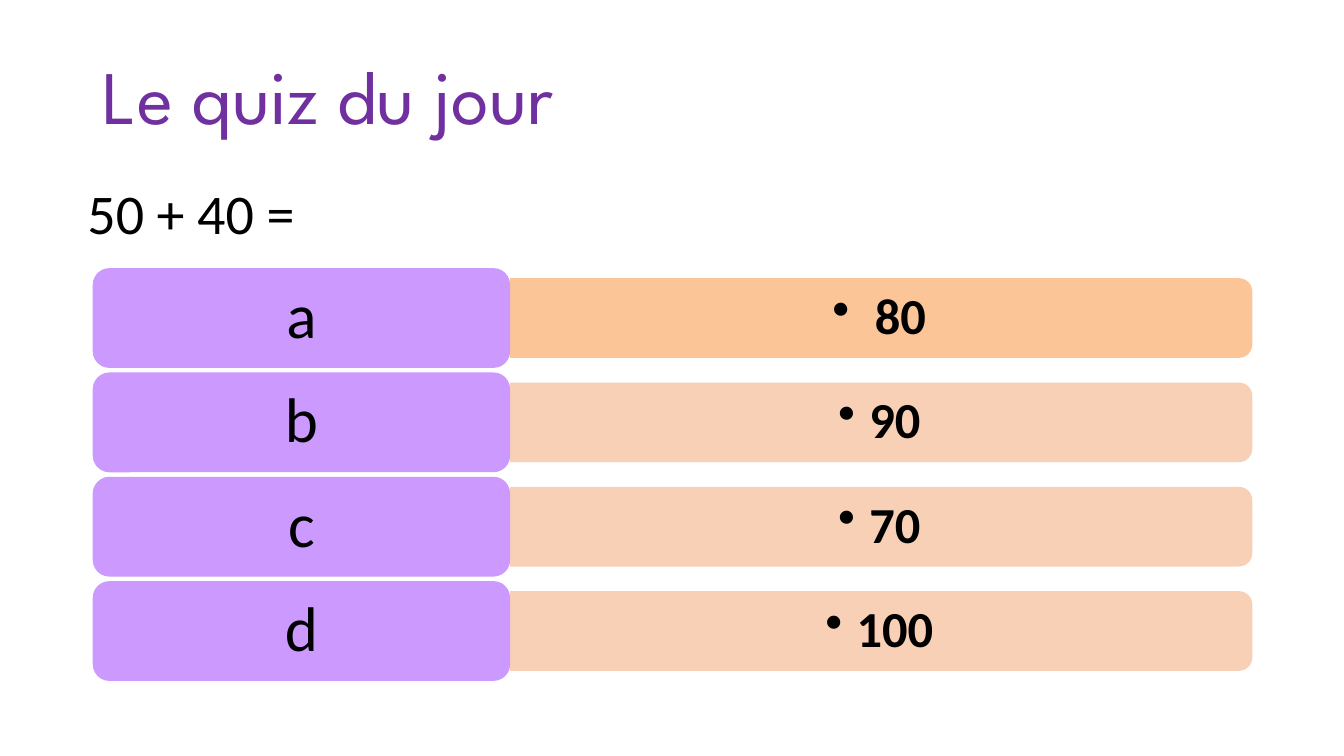
from lxml.etree import SubElement
from pptx import Presentation
from pptx.dml.color import RGBColor
from pptx.enum.shapes import MSO_SHAPE
from pptx.enum.text import MSO_ANCHOR, PP_ALIGN
from pptx.oxml.ns import qn
from pptx.util import Inches, Pt

TITLE = "Le quiz du jour"
QUESTION = "50 + 40 ="
ANSWERS = [
    ("a", " 80", "orange"),
    ("b", "90", "peach"),
    ("c", "70", "peach"),
    ("d", "100", "peach"),
]
COLORS = {
    "title": "7030A0",
    "letter": "CC99FF",
    "orange": "FBBF8D",
    "peach": "F8CBAD",
    "text": "000000",
}
LEFT, TOP, PITCH = 0.92, 2.66, 1.035
LETTER_WIDTH, LETTER_HEIGHT = 4.14, 0.99
BAR_WIDTH, BAR_HEIGHT = 7.36, 0.79


def color(name):
    return RGBColor.from_string(COLORS[name])


def write(box, text, size, font="Calibri", ink="text", bold=False,
          align=PP_ALIGN.CENTER, spacing=0.9):
    frame = box.text_frame
    frame.text = text
    frame.word_wrap = True
    frame.vertical_anchor = MSO_ANCHOR.MIDDLE
    para = frame.paragraphs[0]
    para.alignment = align
    para.line_spacing = spacing
    span = para.runs[0]
    span.font.name = font
    span.font.size = Pt(size)
    span.font.bold = bold
    span.font.color.rgb = color(ink)
    return para


def set_insets(box, side, end):
    frame = box.text_frame
    frame.margin_left = frame.margin_right = Inches(side)
    frame.margin_top = frame.margin_bottom = Inches(end)


def add_filled(page, kind, left, top, width, height, fill):
    shape = page.shapes.add_shape(
        kind, Inches(left), Inches(top), Inches(width), Inches(height))
    shape.shadow.inherit = False
    shape.fill.solid()
    shape.fill.fore_color.rgb = color(fill)
    shape.line.fill.background()
    return shape


def add_bullet(para):
    properties = para._p.get_or_add_pPr()
    properties.set("marL", str(Inches(0.31)))
    properties.set("indent", str(-Inches(0.31)))
    SubElement(properties, qn("a:buChar")).set("char", "•")


def add_answer(page, row, letter, value, fill):
    top = TOP + row * PITCH
    middle = top + LETTER_HEIGHT / 2
    bar_left = LEFT + LETTER_WIDTH

    bar = add_filled(page, MSO_SHAPE.ROUND_2_SAME_RECTANGLE,
                     bar_left + (BAR_WIDTH - BAR_HEIGHT) / 2,
                     middle - BAR_WIDTH / 2, BAR_HEIGHT, BAR_WIDTH, fill)
    bar.rotation = 90
    tint = bar.fill._xPr.find(qn("a:solidFill"))[0]
    SubElement(tint, qn("a:alpha")).set("val", "90000")

    label = page.shapes.add_textbox(
        Inches(bar_left), Inches(middle - 0.355), Inches(7.32), Inches(0.71))
    add_bullet(write(label, value, 36, bold=True))
    set_insets(label, 0.15, 0.07)

    tile = add_filled(page, MSO_SHAPE.ROUNDED_RECTANGLE, LEFT, top,
                      LETTER_WIDTH, LETTER_HEIGHT, "letter")
    write(tile, letter, 45)
    set_insets(tile, 0.19, 0.09)


def main():
    deck = Presentation()
    deck.slide_width, deck.slide_height = Inches(13.33), Inches(7.5)
    page = deck.slides.add_slide(deck.slide_layouts[5])

    title = page.shapes.title
    title.left, title.top = Inches(LEFT), Inches(0.27)
    title.width, title.height = Inches(11.5), Inches(1.45)
    write(title, TITLE, 54, "League Spartan", "title", align=PP_ALIGN.LEFT)

    for row, answer in enumerate(ANSWERS):
        add_answer(page, row, *answer)

    question = page.shapes.add_textbox(
        Inches(0.47), Inches(1.72), Inches(3.1), Inches(0.77))
    write(question, QUESTION, 40, spacing=1.0)
    question.text_frame.margin_right = Inches(0.35)

    deck.save("out.pptx")


if __name__ == "__main__":
    main()
